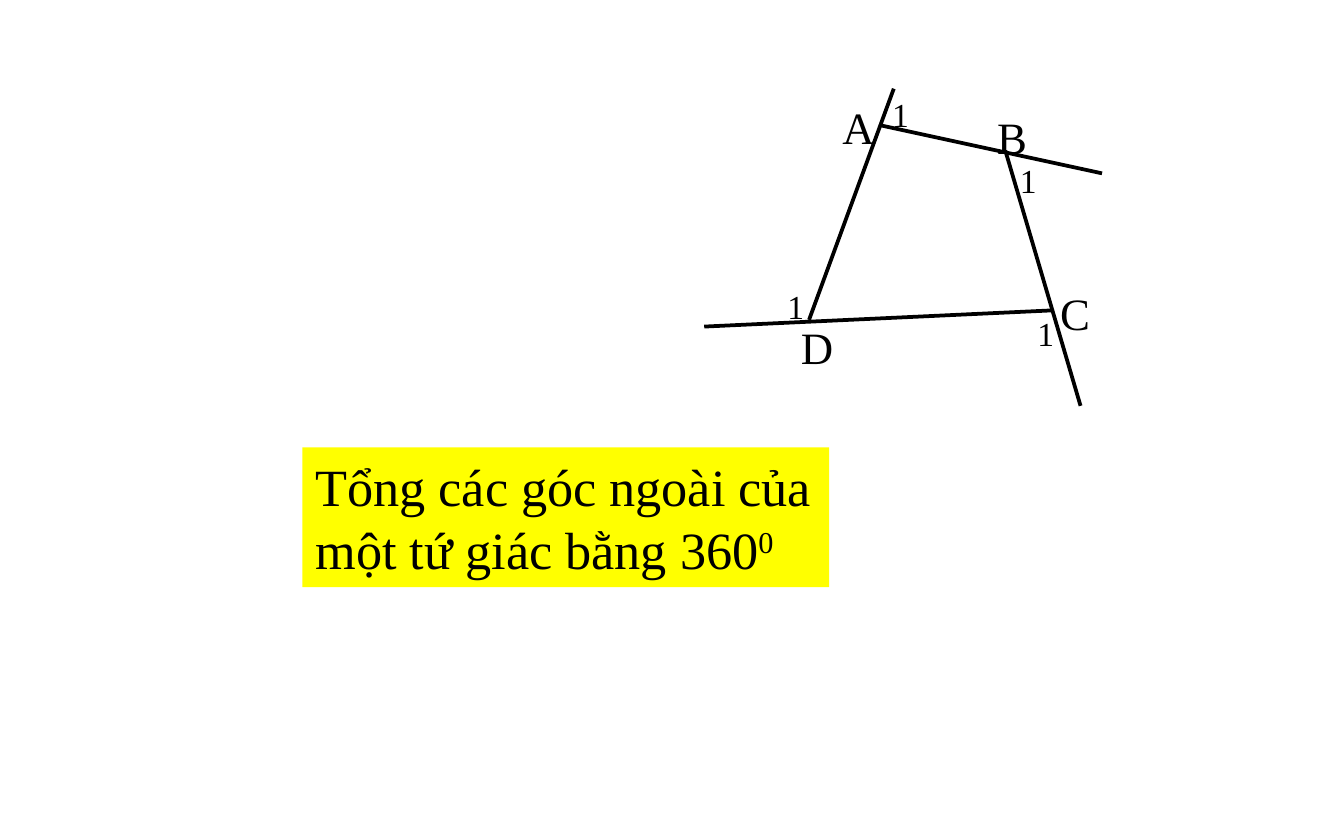
from pptx import Presentation
from pptx.dml.color import RGBColor
from pptx.enum.shapes import MSO_CONNECTOR, MSO_SHAPE
from pptx.enum.text import MSO_ANCHOR, PP_ALIGN
from pptx.oxml.ns import qn
from pptx.util import Inches, Pt
from lxml import etree

FONT = "Times New Roman"
BLACK = "000000"
YELLOW = "FFFF00"


def color(hex_string):
    return RGBColor.from_string(hex_string)


def add_run(paragraph, text, size):
    run = paragraph.add_run()
    run.text = text
    run.font.name = FONT
    run.font.size = Pt(size)
    run.font.color.rgb = color(BLACK)
    return run


presentation = Presentation()
presentation.slide_width = Inches(10)
presentation.slide_height = Inches(6.25)
slide = presentation.slides.add_slide(presentation.slide_layouts[6])

# Sides of the quadrilateral, each extended past one vertex
extended_sides = [
    (6.65, 0.66, 6.02, 2.38),  # DA
    (5.24, 2.43, 7.82, 2.31),  # CD
    (8.04, 3.02, 7.48, 1.12),  # BC
    (6.54, 0.93, 8.2, 1.29),   # AB
]
for side in extended_sides:
    line = slide.shapes.add_connector(MSO_CONNECTOR.STRAIGHT, *map(Inches, side))
    line.line.color.rgb = color(BLACK)
    line.line.width = Pt(2)
    etree.SubElement(line._element.spPr, qn("a:effectLst"))

# Vertex names and exterior angle numbers: text, left, top, width, height, size
labels = [
    ("D", 5.86, 2.33, 0.42, 0.5, 24),
    ("A", 6.17, 0.69, 0.42, 0.5, 24),
    ("B", 7.32, 0.77, 0.42, 0.5, 24),
    ("C", 7.79, 2.08, 0.42, 0.5, 24),
    ("1", 7.62, 2.28, 0.35, 0.4, 18),
    ("1", 5.76, 2.08, 0.35, 0.4, 18),
    ("1", 6.54, 0.65, 0.35, 0.4, 18),
    ("1", 7.49, 1.14, 0.35, 0.4, 18),
]
for text, left, top, width, height, size in labels:
    label = slide.shapes.add_textbox(
        Inches(left), Inches(top), Inches(width), Inches(height))
    label.text_frame.word_wrap = True
    add_run(label.text_frame.paragraphs[0], text, size)

# Theorem
theorem = slide.shapes.add_shape(
    MSO_SHAPE.RECTANGLE, Inches(2.25), Inches(3.33), Inches(3.92), Inches(1.04))
theorem.shadow.inherit = False
theorem.fill.solid()
theorem.fill.fore_color.rgb = color(YELLOW)
theorem.line.fill.background()
theorem.text_frame.word_wrap = True
theorem.text_frame.vertical_anchor = MSO_ANCHOR.TOP
paragraph = theorem.text_frame.paragraphs[0]
paragraph.alignment = PP_ALIGN.LEFT
add_run(paragraph, "Tổng các góc ngoài của một tứ giác bằng 360", 28)
degree = add_run(paragraph, "0", 28)
degree._r.get_or_add_rPr().set("baseline", "30000")

presentation.save("out.pptx")
